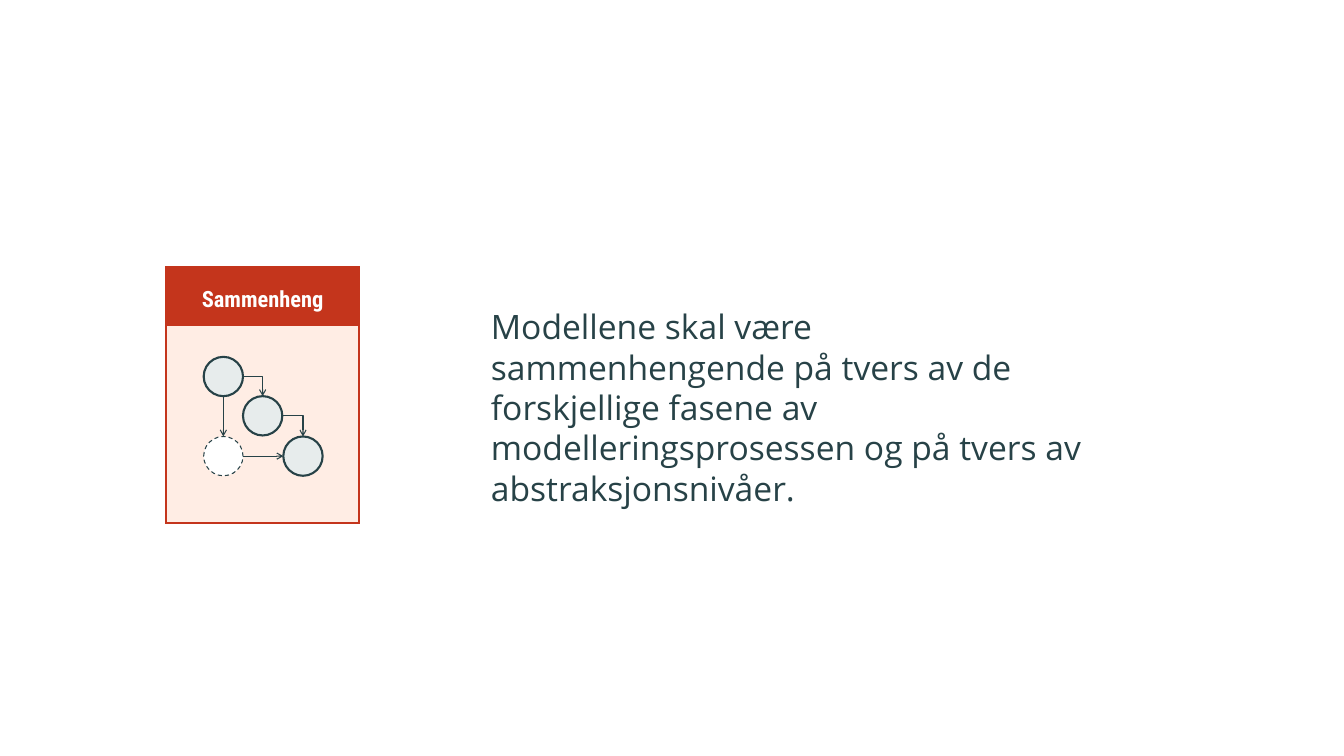
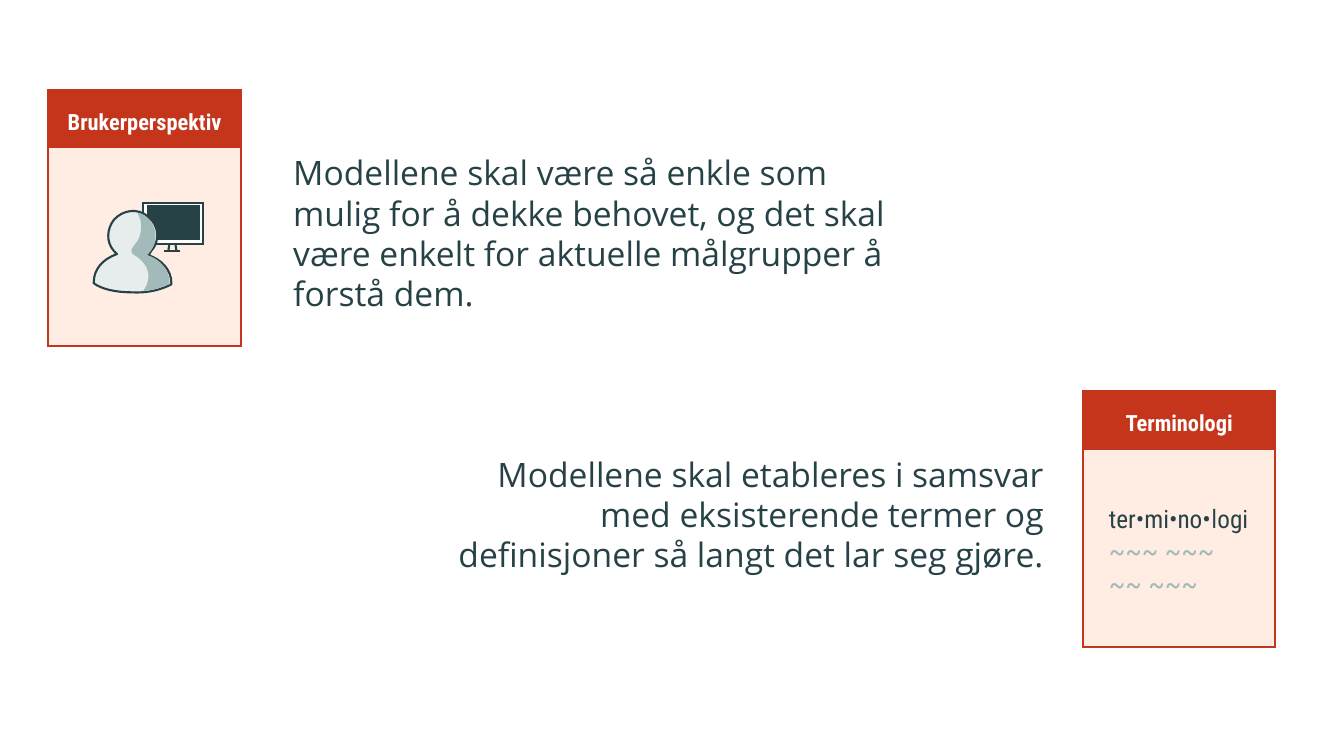
"""Build two slides of modelling principles, each shown as a card with a statement."""
from lxml.etree import SubElement
from pptx import Presentation
from pptx.dml.color import RGBColor
from pptx.enum.dml import MSO_LINE
from pptx.enum.shapes import MSO_CONNECTOR, MSO_SHAPE
from pptx.enum.text import MSO_AUTO_SIZE, PP_ALIGN
from pptx.oxml.ns import qn
from pptx.util import Emu, Pt

PX = 9144
SLIDE_W, SLIDE_H = 1333, 750
CARD_W, CARD_H, BAND_H = 191, 254, 57
NODE, NODE_X, NODE_Y, NODE_STEP2 = 39, 37, 89, 79

RED, PEACH, WHITE = "C4351C", "FFDDCA", "FFFFFF"
INK, PALE, SAGE = "274247", "E7ECEC", "A2BABA"

HEADING = dict(name="Roboto Condensed", size=Pt(16), bold=True)
STATEMENT = dict(name="Open Sans", size=Pt(24))
TERM = dict(name="Roboto Condensed", size=Pt(18))
TERM_L = dict(name="Open Sans", size=Pt(18))
WAVE = dict(name="Roboto Condensed", size=Pt(20))

TERM_LINES = [
    [("ter•mi•no•", TERM, INK), ("l", TERM_L, INK), ("ogi", TERM, INK)],
    [("~~~ ~~~", WAVE, SAGE)],
    [("~~ ~~~", WAVE, SAGE)],
]

SCREEN = [((94, 112, 59, 41), WHITE, 1.5), ((98, 115, 52, 34), INK, 0.75)]
STAND = [(115, 160, 131, 160), (127, 160, 126, 153), (119, 160, 120, 153)]
PERSON_BOX = (42, 118, 81, 85)
PERSON = [
    (99, 164),
    (100, 163, 101, 162, 102, 160), (111, 150, 110, 135, 99, 126),
    (89, 117, 74, 119, 65, 129), (58, 138, 57, 151, 65, 160),
    (66, 161, 67, 162, 68, 163), (54, 168, 45, 178, 45, 191),
    (45, 191, 45, 192, 45, 192), (53, 198, 67, 201, 83, 201),
    (99, 202, 113, 198, 122, 193), (122, 193, 122, 192, 122, 192),
    (122, 179, 113, 169, 99, 164),
]
SHADE_BOX = (82, 122, 38, 78)
SHADE = [
    (98, 164),
    (108, 155, 109, 140, 101, 130), (98, 126, 93, 123, 88, 122),
    (91, 126, 92, 131, 92, 136), (92, 141, 91, 145, 89, 149),
    (87, 153, 78, 160, 85, 164), (94, 169, 101, 178, 99, 189),
    (98, 193, 96, 197, 94, 200), (104, 199, 113, 196, 120, 193),
    (120, 192, 120, 192, 120, 191), (120, 179, 111, 168, 98, 164),
]


def rgb(color):
    return RGBColor.from_string(color)


def emu(*lengths):
    return [Emu(round(v * PX)) for v in lengths]


def paint(sp, fill, line=None, width=1.5):
    sp.shadow.inherit = False
    sp.fill.solid()
    sp.fill.fore_color.rgb = rgb(fill)
    if line:
        sp.line.color.rgb = rgb(line)
        sp.line.width = Pt(width)
    else:
        sp.line.fill.background()
    return sp


def add_text(shapes, box, lines, align=PP_ALIGN.LEFT):
    tf = shapes.add_textbox(*emu(*box)).text_frame
    tf.word_wrap = True
    tf.auto_size = MSO_AUTO_SIZE.SHAPE_TO_FIT_TEXT
    p = tf.paragraphs[0]
    p.alignment = align
    for i, runs in enumerate(lines):
        if i:
            p.add_line_break()
        for text, fmt, color in runs:
            r = p.add_run()
            r.text = text
            for key, value in fmt.items():
                setattr(r.font, key, value)
            r.font.color.rgb = rgb(color)


class Card:
    """A titled card whose figure is placed relative to its top left corner."""

    def __init__(self, slide, x, y, title):
        self.x, self.y = x, y
        self.shapes = slide.shapes.add_group_shape().shapes
        body = self.shape((0, 0, CARD_W, CARD_H), PEACH, RED)
        fill = body._element.spPr.find(qn("a:solidFill"))
        SubElement(fill[0], qn("a:alpha"), val="50000")
        self.shape((0, 0, CARD_W, BAND_H), RED, RED)
        self.text((0, 13, CARD_W, 37), [[(title, HEADING, WHITE)]], PP_ALIGN.CENTER)

    def place(self, box):
        x, y, w, h = box
        return self.x + x, self.y + y, w, h

    def shape(self, box, fill, line, width=1.5, kind=MSO_SHAPE.RECTANGLE):
        sp = self.shapes.add_shape(kind, *emu(*self.place(box)))
        paint(sp, fill, line, width)
        ln = sp._element.spPr.find(qn("a:ln"))
        SubElement(ln, qn("a:miter"), lim="800000")
        return sp

    def text(self, box, lines, align=PP_ALIGN.LEFT):
        add_text(self.shapes, self.place(box), lines, align)

    def line(self, x1, y1, x2, y2, width=1.5, arrow=False):
        bent = x1 != x2 and y1 != y2 and arrow
        kind = MSO_CONNECTOR.ELBOW if bent else MSO_CONNECTOR.STRAIGHT
        ends = emu(self.x + x1, self.y + y1, self.x + x2, self.y + y2)
        c = self.shapes.add_connector(kind, *ends)
        c.line.color.rgb = rgb(INK)
        c.line.width = Pt(width)
        sp_pr = c._element.spPr
        if bent:
            sp_pr.find(qn("a:prstGeom")).set("prst", "bentConnector2")
        if arrow:
            ln = sp_pr.find(qn("a:ln"))
            SubElement(ln, qn("a:tailEnd"), type="arrow", w="sm", len="sm")
        SubElement(sp_pr, qn("a:effectLst"))

    def outline(self, box, curves, fill, line=None):
        start, *curves = curves
        builder = self.shapes.build_freeform(*emu(*start))
        builder.add_line_segments([emu(*c[4:]) for c in curves], close=True)
        sp = paint(builder.convert_to_shape(), fill, line)
        sp.left, sp.top, sp.width, sp.height = emu(*self.place(box))
        left, top, w, h = box
        outline = sp._element.spPr.find(".//" + qn("a:path"))
        for child in list(outline):
            outline.remove(child)
        for key, value in zip("wh", emu(w, h)):
            outline.set(key, str(value))
        for tag, xy in [("a:moveTo", start)] + [("a:cubicBezTo", c) for c in curves]:
            step = SubElement(outline, qn(tag))
            for x, y in zip(xy[::2], xy[1::2]):
                px, py = emu(x - left, y - top)
                SubElement(step, qn("a:pt"), x=str(px), y=str(py))
        SubElement(outline, qn("a:close"))


def draw_flow(card):
    xs, ys = ([v + NODE_STEP2 * i // 2 for i in range(3)] for v in (NODE_X, NODE_Y))
    half = NODE / 2
    for x, y in zip(xs, ys):
        card.shape((x, y, NODE, NODE), PALE, INK, kind=MSO_SHAPE.OVAL)
    ghost = card.shape((xs[0], ys[2], NODE, NODE), WHITE, INK, 0.75, MSO_SHAPE.OVAL)
    ghost.line.dash_style = MSO_LINE.DASH
    links = [(xs[i] + NODE, ys[i] + half, xs[i + 1] + half, ys[i + 1]) for i in range(2)]
    links.append((xs[0] + half, ys[0] + NODE, xs[0] + half, ys[2]))
    links.append((xs[0] + NODE, ys[2] + half, xs[2], ys[2] + half))
    for link in links:
        card.line(*link, width=0.75, arrow=True)


def draw_user(card):
    for box, fill, width in SCREEN:
        card.shape(box, fill, INK, width)
    for ends in STAND:
        card.line(*ends)
    card.outline(PERSON_BOX, PERSON, PALE, INK)
    card.outline(SHADE_BOX, SHADE, SAGE)


def draw_term(card):
    card.text((16, 106, 161, 108), TERM_LINES)


SLIDES = [
    [("Sammenheng", (165, 265), draw_flow, (477, 299, 621, 172), PP_ALIGN.LEFT,
      "Modellene skal være sammenhengende på tvers av de forskjellige fasene av "
      "modelleringsprosessen og på tvers av abstraksjonsnivåer.")],
    [("Terminologi", (1074, 388), draw_term, (424, 445, 621, 131), PP_ALIGN.RIGHT,
      "Modellene skal etableres i samsvar med eksisterende termer og definisjoner "
      "så langt det lar seg gjøre."),
     ("Brukerperspektiv", (48, 89), draw_user, (281, 146, 621, 172), PP_ALIGN.LEFT,
      "Modellene skal være så enkle som mulig for å dekke behovet, og det skal "
      "være enkelt for aktuelle målgrupper å forstå dem.")],
]


def main():
    prs = Presentation()
    prs.slide_width, prs.slide_height = emu(SLIDE_W, SLIDE_H)
    for principles in SLIDES:
        s = prs.slides.add_slide(prs.slide_layouts[6])
        for title, corner, draw, box, align, text in principles:
            draw(Card(s, *corner, title))
            add_text(s.shapes, box, [[(text, STATEMENT, INK)]], align)
    prs.save("out.pptx")


if __name__ == "__main__":
    main()
